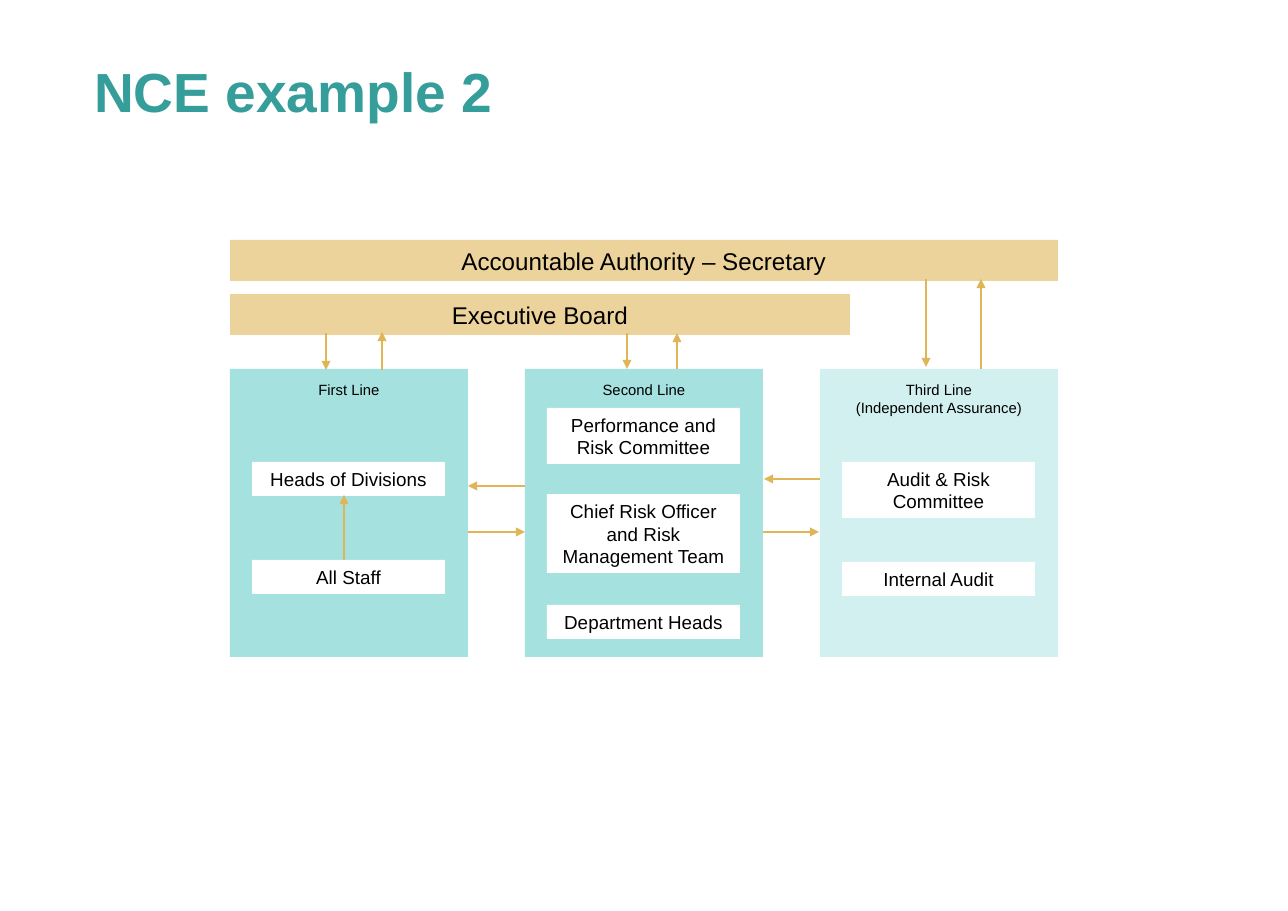
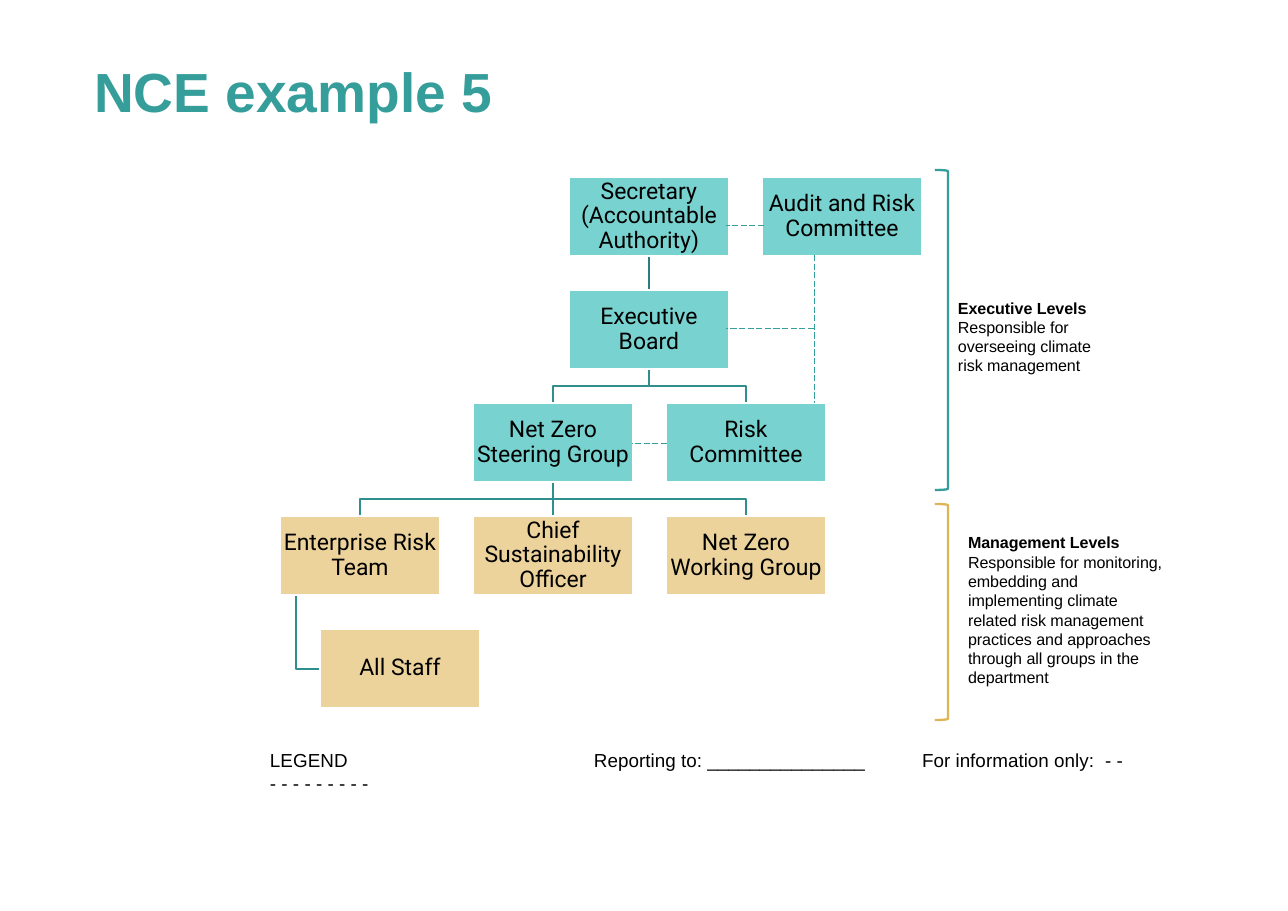
from lxml import etree
from pptx import Presentation
from pptx import util as u
from pptx.dml.color import RGBColor
from pptx.enum import dml, shapes, text
from pptx.oxml.ns import qn

PX = 8298  # EMU in one px
BLACK = RGBColor(0x00, 0x00, 0x00)
WHITE = RGBColor(0xFF, 0xFF, 0xFF)
TEAL = RGBColor(0x35, 0x9D, 0x9A)
REPORT_TEAL = RGBColor(0x30, 0x8E, 0x8C)
DARK_TEAL = RGBColor(0x2A, 0x7E, 0x7B)
EXECUTIVE_TEAL = RGBColor(0x78, 0xD2, 0xCF)
LINE_TEAL = RGBColor(0xA5, 0xE1, 0xDF)
PALE_TEAL = RGBColor(0xD2, 0xF0, 0xEF)
SAND = RGBColor(0xEC, 0xD3, 0x9B)
GOLD = RGBColor(0xDF, 0xB5, 0x58)
RECT = shapes.MSO_SHAPE.RECTANGLE
LEFT, CENTER = text.PP_ALIGN.LEFT, text.PP_ALIGN.CENTER
TOP, MIDDLE = text.MSO_ANCHOR.TOP, text.MSO_ANCHOR.MIDDLE


def write(shape, content, size, color=BLACK, font="Arial", bold=False, bold_first=False,
          align=CENTER, anchor=MIDDLE, insets=(10, 4), spacing=None, tabs=(),
          fill=None, outline=None):
    """Fill a shape with paragraphs split at line ends; insets are (side, top) in px."""
    if fill is not None:
        shape.shadow.inherit = False
        shape.fill.solid()
        shape.fill.fore_color.rgb = fill
        shape.line.fill.background()
    if outline is not None:
        shape.line.color.rgb = outline
        shape.line.width = u.Pt(1)
    frame = shape.text_frame
    frame.word_wrap = True
    frame.auto_size = text.MSO_AUTO_SIZE.NONE
    frame.vertical_anchor = anchor
    frame.margin_left = frame.margin_right = insets[0] * PX
    frame.margin_top = frame.margin_bottom = insets[1] * PX
    frame.text = content
    for number, paragraph in enumerate(frame.paragraphs):
        paragraph.alignment = align
        if spacing:
            paragraph.line_spacing = spacing
        if tabs:
            stops = etree.SubElement(paragraph._p.get_or_add_pPr(), qn("a:tabLst"))
            for stop in tabs:
                etree.SubElement(stops, qn("a:tab"), pos=str(stop * PX), algn="l")
        for run in paragraph.runs:
            run.font.name = font
            run.font.size = u.Pt(size)
            run.font.bold = bold or (bold_first and number == 0)
            run.font.color.rgb = color


def connect(slide, x1, y1, x2, y2, color, width=1, arrow=False, dash=None):
    line = slide.shapes.add_connector(
        shapes.MSO_CONNECTOR.STRAIGHT, x1 * PX, y1 * PX, x2 * PX, y2 * PX)
    line.line.color.rgb = color
    line.line.width = u.Pt(width)
    if dash:
        line.line.dash_style = dash
    properties = line._element.spPr
    if arrow:
        etree.SubElement(properties.find(qn("a:ln")), qn("a:tailEnd"), type="triangle")
    etree.SubElement(properties, qn("a:effectLst"))


deck = Presentation()
deck.slide_width, deck.slide_height = 1288 * PX, 911 * PX

# Shared title
title_layout = deck.slide_layouts[5]
heading = title_layout.placeholders[0]
heading.left, heading.top, heading.width, heading.height = 94 * PX, 65 * PX, 1133 * PX, 76 * PX
for name in ("NCE example 2", "NCE example 5"):
    write(deck.slides.add_slide(title_layout).shapes.title, name, 36, color=TEAL, bold=True,
          align=LEFT, anchor=TOP, insets=(0, 0), spacing=0.9)
three_lines, hierarchy = deck.slides

# Three lines: governing bodies
for body, top, width in (("Accountable Authority – Secretary", 240, 828),
                         ("Executive Board", 294, 620)):
    bar = three_lines.shapes.add_shape(RECT, 230 * PX, top * PX, width * PX, 41 * PX)
    write(bar, body, 15.8, fill=SAND)

# Three lines: columns with their roles (name, top, height)
columns = (
    ("First Line", LINE_TEAL,
     (("Heads of Divisions", 462, 34), ("All Staff", 560, 34))),
    ("Second Line", LINE_TEAL,
     (("Performance and Risk Committee", 408, 56),
      ("Chief Risk Officer and Risk Management Team", 494, 79),
      ("Department Heads", 605, 34))),
    ("Third Line\n(Independent Assurance)", PALE_TEAL,
     (("Audit & Risk Committee", 462, 56), ("Internal Audit", 562, 34))),
)
for index, (caption, tint, roles) in enumerate(columns):
    left = 230 + 295 * index
    column = three_lines.shapes.add_shape(RECT, left * PX, 369 * PX, 238 * PX, 288 * PX)
    write(column, caption, 9.7, anchor=TOP, insets=(10, 12), fill=tint)
    for role, top, height in roles:
        card = three_lines.shapes.add_shape(
            RECT, (left + 22) * PX, top * PX, 193 * PX, height * PX)
        write(card, role, 12.3, fill=WHITE)

for ends in (
    (326, 333, 326, 370), (382, 370, 382, 332),  # board and first line
    (627, 333, 627, 369), (677, 369, 677, 333),  # board and second line
    (926, 279, 926, 367), (981, 369, 981, 279),  # authority and third line
    (525, 486, 468, 486), (468, 532, 525, 532),  # first and second line
    (820, 479, 764, 479), (763, 532, 819, 532),  # second and third line
    (344, 560, 344, 495),  # staff to heads
):
    connect(three_lines, *ends, GOLD, arrow=True)

# Hierarchy: each unit sits on a row and a half-column slot
BOX_W, BOX_H = 160, 79
units = {
    "Secretary (Accountable Authority)": (3, 0),
    "Audit and Risk Committee": (5, 0),
    "Executive Board": (3, 1),
    "Net Zero Steering Group": (2, 2),
    "Risk Committee": (4, 2),
    "Enterprise Risk Team": (0, 3),
    "Chief Sustainability Officer": (2, 3),
    "Net Zero Working Group": (4, 3),
}
corners = {unit: (280 + 193 * slot // 2, 177 + 113 * row) for unit, (slot, row) in units.items()}
corners["All Staff"] = (320, 629)

reports = (
    ("Net Zero Steering Group", "Enterprise Risk Team"),
    ("Net Zero Steering Group", "Chief Sustainability Officer"),
    ("Net Zero Steering Group", "Net Zero Working Group"),
    ("Executive Board", "Net Zero Steering Group"),
    ("Executive Board", "Risk Committee"),
    ("Secretary (Accountable Authority)", "Executive Board"),
)
elbows = [[(296, 595), (296, 669), (320, 669)]]
for senior, junior in reports:
    (x1, y1), (x2, y2) = corners[senior], corners[junior]
    x1, x2, y1 = x1 + BOX_W // 2, x2 + BOX_W // 2, y1 + BOX_H
    if x1 == x2:
        tone = DARK_TEAL if senior.startswith("Secretary") else REPORT_TEAL
        connect(hierarchy, x1, y1, x2, y2, tone)
    else:
        middle = (y1 + y2) // 2
        elbows.append([(x1, y1), (x1, middle), (x2, middle), (x2, y2)])
for points in elbows:
    outline = hierarchy.shapes.build_freeform(*points[0], scale=PX)
    outline.add_line_segments(points[1:], close=False)
    elbow = outline.convert_to_shape()
    elbow.shadow.inherit = False
    elbow.fill.background()
    elbow.line.color.rgb = REPORT_TEAL
    elbow.line.width = u.Pt(1)

for unit, (left, top) in corners.items():
    box = hierarchy.shapes.add_shape(RECT, left * PX, top * PX, BOX_W * PX, BOX_H * PX)
    write(box, unit, 15, font="Roboto", insets=(1, 1), spacing=0.9,
          fill=SAND if top > 500 else EXECUTIVE_TEAL, outline=WHITE)

for ends in ((814, 255, 814, 403), (667, 443, 632, 443),
             (814, 328, 726, 328), (764, 225, 726, 225)):
    connect(hierarchy, *ends, TEAL, width=0.5, dash=dml.MSO_LINE.LONG_DASH)

# Hierarchy: levels, each with a bracket and a note
levels = (
    (TEAL, 170, 320, (948, 294, 175, 88),
     "Executive Levels\nResponsible for overseeing climate risk management"),
    (GOLD, 504, 216, (958, 529, 216, 166),
     "Management Levels\nResponsible for monitoring, embedding and implementing climate related "
     "risk management practices and approaches through all groups in the department"),
)
for tone, top, height, area, note in levels:
    bracket = hierarchy.shapes.add_shape(
        shapes.MSO_SHAPE.RIGHT_BRACKET, 935 * PX, top * PX, 13 * PX, height * PX)
    bracket.shadow.inherit = False
    bracket.fill.background()
    bracket.line.color.rgb = tone
    bracket.line.width = u.Pt(1.5)
    write(hierarchy.shapes.add_textbox(*(n * PX for n in area)), note, 10.5,
          bold_first=True, align=LEFT, anchor=TOP)

legend = hierarchy.shapes.add_textbox(260 * PX, 745 * PX, 876 * PX, 55 * PX)
write(legend, "LEGEND\tReporting to: _______________\tFor information only:\t- - - - - - - - - - -",
      12.3, align=LEFT, anchor=TOP, tabs=(324, 652, 835))

deck.save("out.pptx")
